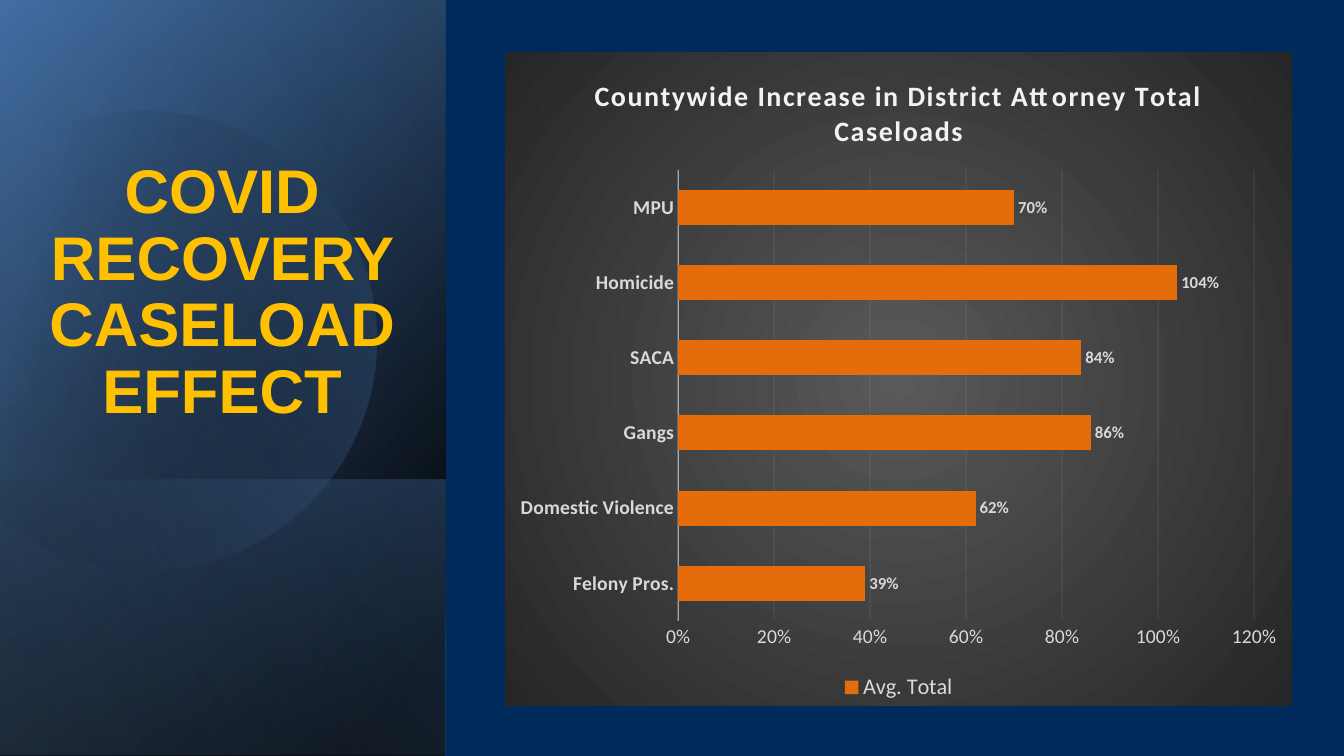
from math import acos, cos, pi, radians, sin

from lxml.etree import SubElement
from pptx import Presentation
from pptx.chart.data import CategoryChartData
from pptx.dml.color import RGBColor
from pptx.enum.chart import XL_CHART_TYPE as ChartType
from pptx.enum.chart import XL_LABEL_POSITION as LabelPosition
from pptx.enum.chart import XL_LEGEND_POSITION as LegendPosition
from pptx.enum.chart import XL_TICK_MARK as TickMark
from pptx.enum.shapes import MSO_SHAPE as Shape
from pptx.enum.text import MSO_ANCHOR as Anchor
from pptx.enum.text import PP_ALIGN as Align
from pptx.oxml import parse_xml
from pptx.oxml.ns import nsdecls, qn
from pptx.util import Pt

COLORS = {
    "navy": "00295C", "black": "000000", "deep blue": "376092",
    "blue": "4F81BD", "pale blue": "95B3D7", "gold": "FFC000",
    "orange": "E46C0A", "near white": "F2F2F2", "light gray": "D9D9D9",
    "mid gray": "595959", "dark gray": "262626",
}
CASELOADS = {
    "Felony Pros.": 0.39, "Domestic Violence": 0.62, "Gangs": 0.86,
    "SACA": 0.84, "Homicide": 1.04, "MPU": 0.70,
}
# Layers of the left panel: left, top, width, height, gradient angle, stops.
# A stop is position, colour, opacity, all but the colour in percent.
PANEL_BASE = [
    (-110.88, 110.88, 540, 318.24, 50,
     [(8, "black", 100), (100, "deep blue", 100)]),
    (-110.88, 111.6, 540, 318.24, 30,
     [(0, "black", 0), (99, "blue", 46)]),
    (60.48, 282.24, 197.28, 318.24, 130,
     [(2, "blue", 29), (100, "black", 30)]),
]
PANEL_SHEEN = (-110.88, 110.16, 540, 318.24, 120,
               [(0, "black", 0), (99, "pale blue", 11)])


def rgb(name):
    return RGBColor.from_string(COLORS[name])


def gradient_xml(stops, angle=None):
    """Gradient along an angle, or from the centre outwards without one."""
    stop_xml = "".join(
        f'<a:gs pos="{position * 1000}"><a:srgbClr val="{COLORS[color]}">'
        f'<a:alpha val="{opacity * 1000}"/></a:srgbClr></a:gs>'
        for position, color, opacity in stops)
    if angle is None:
        direction = ('<a:path path="circle"><a:fillToRect l="50000" t="50000" '
                     'r="50000" b="50000"/></a:path>')
    else:
        direction = f'<a:lin ang="{angle * 60000}" scaled="0"/>'
    return (f'<a:gradFill {nsdecls("a")} rotWithShape="1">'
            f'<a:gsLst>{stop_xml}</a:gsLst>{direction}</a:gradFill>')


def paint(shape, stops, angle):
    shape.shadow.inherit = False
    shape.line.fill.background()
    shape.fill.background()
    properties = shape.fill._xPr
    properties.replace(properties.find(qn("a:noFill")),
                       parse_xml(gradient_xml(stops, angle)))


def add_layer(slide, left, top, width, height, angle, stops):
    shape = slide.shapes.add_shape(
        Shape.RECTANGLE, Pt(left), Pt(top), Pt(width), Pt(height))
    shape.rotation = 90
    shape._element.spPr.find(qn("a:xfrm")).set("flipH", "1")
    paint(shape, stops, angle)


def add_clipped_circle(slide):
    """Circle cut by a vertical edge, tilted about its pivot."""
    center_x, center_y, radius, edge_x = 104.4, 243.4, 164.2, -10.8
    pivot_x, pivot_y, tilt, steps = 114.1, 240.8, 16.1, 120
    reach = acos((edge_x - center_x) / radius)
    turn = radians(tilt)
    points = []
    for step in range(steps + 1):
        angle = -reach + 2 * reach * step / steps
        x = center_x + radius * cos(angle) - pivot_x
        y = center_y + radius * sin(angle) - pivot_y
        points.append((Pt(pivot_x + x * cos(turn) - y * sin(turn)),
                       Pt(pivot_y + x * sin(turn) + y * cos(turn))))
    builder = slide.shapes.build_freeform(*points[0])
    builder.add_line_segments(points[1:], close=True)
    shape = builder.convert_to_shape()
    shape.rotation = 360 - tilt
    paint(shape, [(29, "black", 0), (100, "blue", 43)], 30)


def add_title(slide):
    box = slide.shapes.add_textbox(Pt(20.9), Pt(42.5), Pt(275.8), Pt(265.7))
    frame = box.text_frame
    frame.word_wrap = True
    frame.vertical_anchor = Anchor.BOTTOM
    paragraph = frame.paragraphs[0]
    paragraph.text = "COVID RECOVERY CASELOAD EFFECT"
    paragraph.alignment = Align.CENTER
    paragraph.line_spacing = 0.9
    style_font(paragraph.font, 44, "gold", True, "Arial")


def style_font(font, size, color, bold=False, name="Calibri"):
    font.name, font.size, font.bold = name, Pt(size), bold
    font.color.rgb = rgb(color)


def style_line(line, width, opacity):
    line.width = Pt(width)
    line.color.rgb = rgb("near white")
    for color in line._ln.iter(qn("a:srgbClr")):
        SubElement(color, qn("a:alpha")).set("val", str(opacity * 1000))


def style_axes(chart):
    for axis, bold in ((chart.category_axis, True), (chart.value_axis, False)):
        axis.major_tick_mark = axis.minor_tick_mark = TickMark.NONE
        style_font(axis.tick_labels.font, 14, "light gray", bold)
    style_line(chart.category_axis.format.line, 1, 54)

    values = chart.value_axis
    values.minimum_scale, values.maximum_scale, values.major_unit = 0, 1.2, 0.2
    values.tick_labels.number_format = "0%"
    values.tick_labels.number_format_is_linked = False
    values.format.line.fill.background()
    values.has_major_gridlines = True
    style_line(values.major_gridlines.format.line, 0.75, 10)


def style_bars(plot):
    plot.gap_width, plot.overlap, plot.vary_by_categories = 115, -20, False
    series = plot.series[0]
    series.format.fill.solid()
    series.format.fill.fore_color.rgb = rgb("orange")
    labels = series.data_labels
    labels.show_value = True
    labels.position = LabelPosition.OUTSIDE_END
    labels.number_format = "0%"
    labels.number_format_is_linked = False
    style_font(labels.font, 12, "light gray", True)


def add_caseload_chart(slide):
    data = CategoryChartData(number_format="0%")
    data.categories = list(CASELOADS)
    data.add_series("Avg. Total", list(CASELOADS.values()))
    chart = slide.shapes.add_chart(
        ChartType.BAR_CLUSTERED, Pt(360.7), Pt(37.4), Pt(562.3), Pt(466.6),
        data).chart
    style_font(chart.font, 10, "near white")

    # Heading and legend
    chart.has_title = True
    paragraph = chart.chart_title.text_frame.paragraphs[0]
    run = paragraph.add_run()
    run.text = "Countywide Increase in District Attorney Total Caseloads"
    style_font(paragraph.font, 20, "near white", True)
    style_font(run.font, 20, "near white", True)
    run.font._element.set("spc", "100")
    chart.has_legend = True
    chart.legend.position = LegendPosition.BOTTOM
    chart.legend.include_in_layout = False
    style_font(chart.legend.font, 16, "light gray")

    style_axes(chart)
    style_bars(chart.plots[0])

    # Chart background
    glow = gradient_xml([(0, "mid gray", 100), (100, "dark gray", 100)])
    chart._chartSpace.find(qn("c:chart")).addnext(parse_xml(
        f'<c:spPr {nsdecls("c", "a")}>{glow}'
        '<a:ln><a:noFill/></a:ln></c:spPr>'))


def main():
    presentation = Presentation()
    presentation.slide_width, presentation.slide_height = Pt(960), Pt(540)
    slide = presentation.slides.add_slide(presentation.slide_layouts[6])
    slide.background.fill.solid()
    slide.background.fill.fore_color.rgb = rgb("navy")

    # Left panel
    for layer in PANEL_BASE:
        add_layer(slide, *layer)
    add_clipped_circle(slide)
    add_layer(slide, *PANEL_SHEEN)
    add_title(slide)

    # Right side
    add_caseload_chart(slide)
    presentation.save("out.pptx")


if __name__ == "__main__":
    main()
